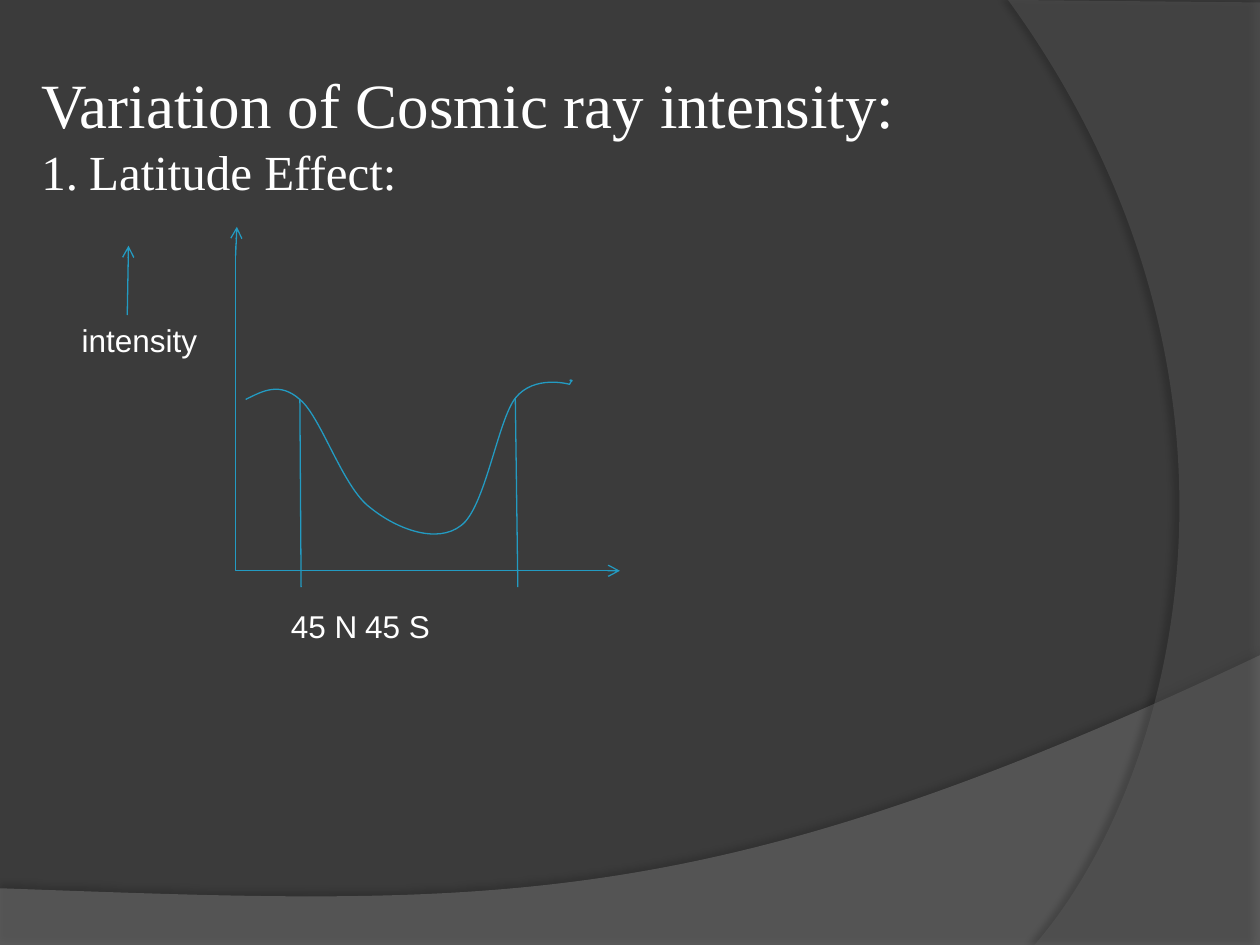
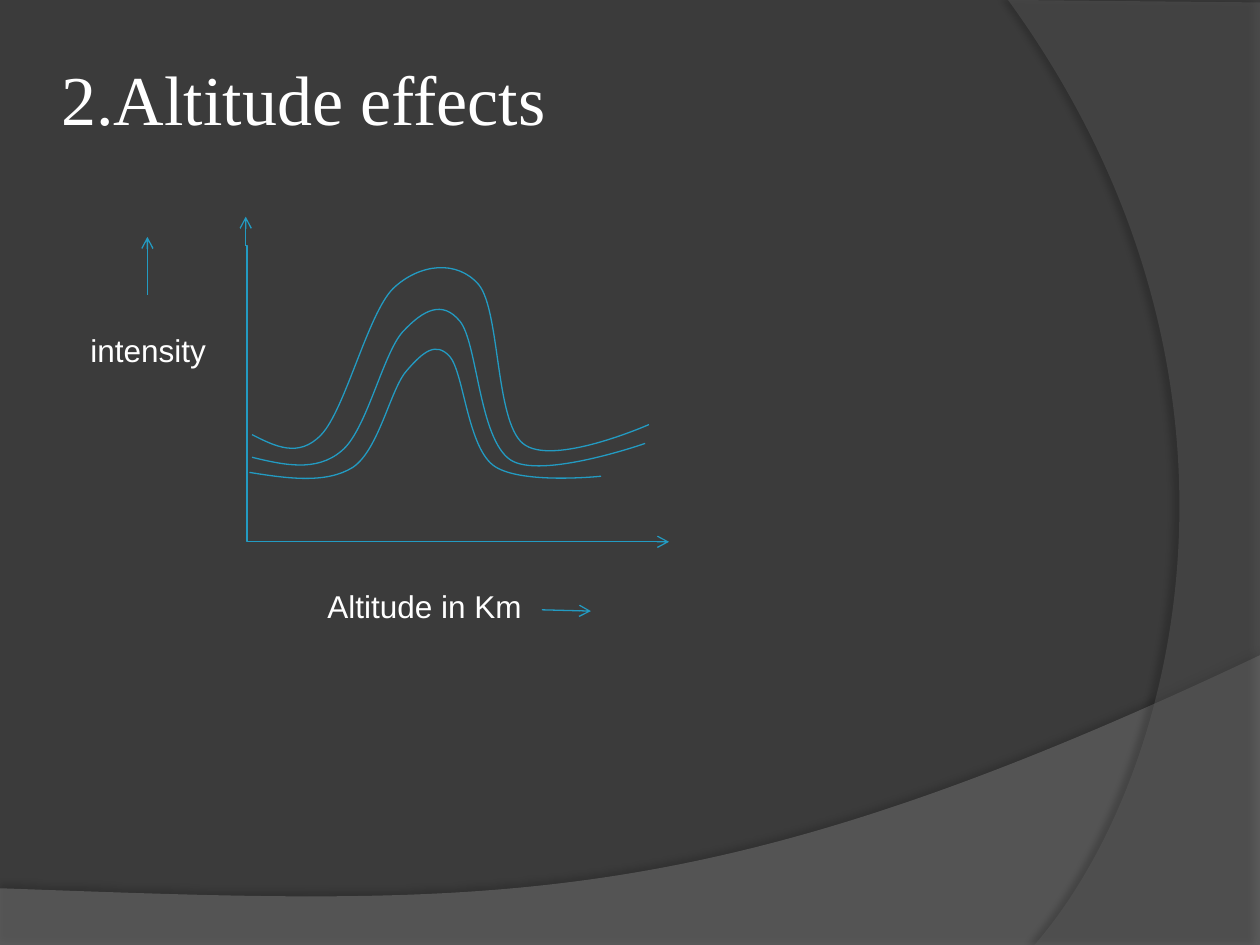
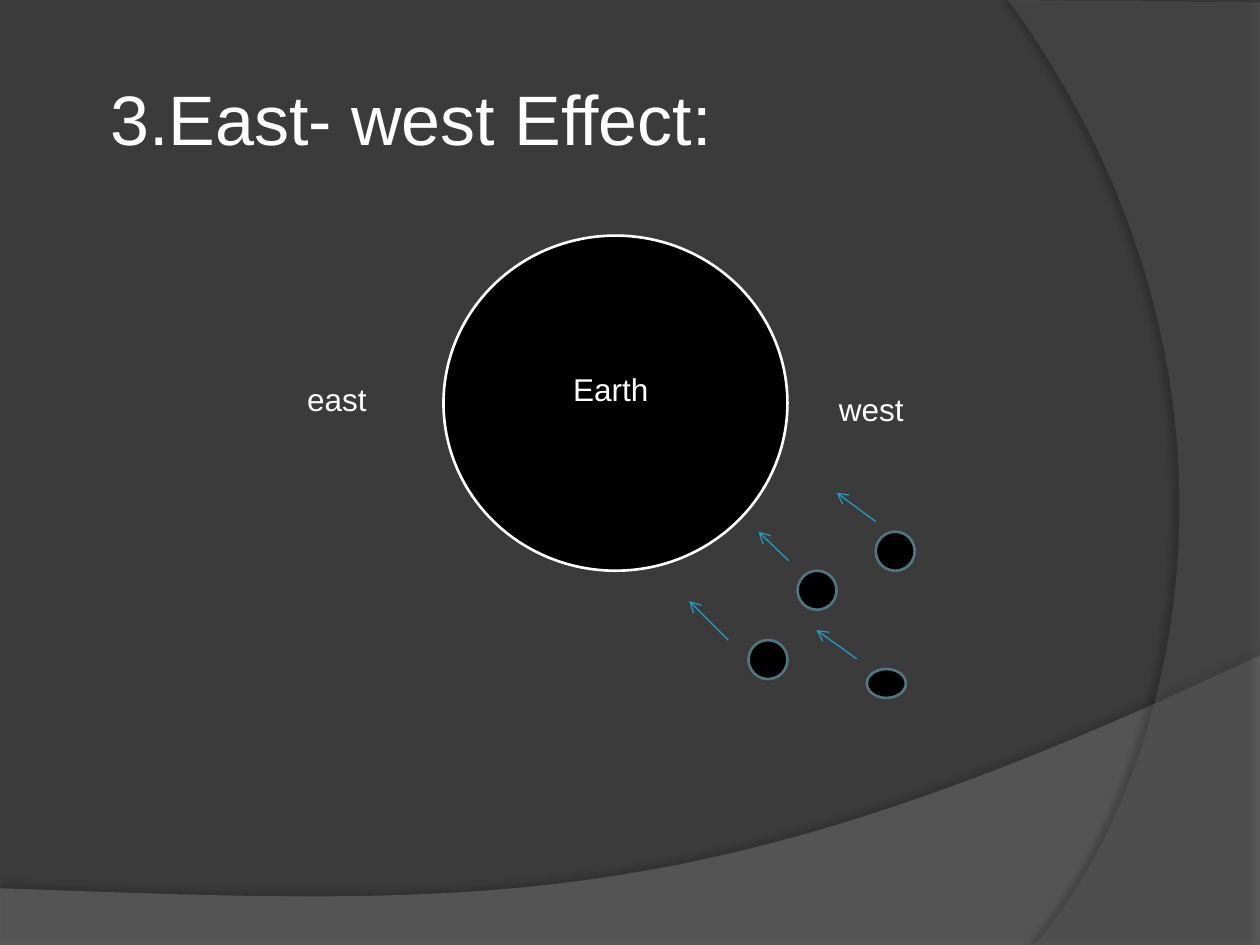
from lxml.etree import SubElement
from pptx import Presentation
from pptx.dml.color import RGBColor
from pptx.enum.shapes import MSO_CONNECTOR as Link, MSO_SHAPE as Preset
from pptx.oxml.ns import qn
from pptx.util import Inches, Pt

WIDTH, HEIGHT = Inches(10), Inches(7.5)
COLUMN = WIDTH // 10

BACKDROP, WHITE, BLACK = "3B3B3B", "FFFFFF", "000000"
LINE_BLUE, PARTICLE_EDGE = "239BC2", "517682"
SANS, SERIF = "Arial", "Times New Roman"

LOWER_BAND = [(0, 7.05), (0, 7.51), (10, 7.51), (10, 5.2),
              (5.59, 7.29, 3.91, 7.19, 0, 7.05)]
RIGHT_BAND = [(10, 0.02), (10, 7.5), (8.21, 7.5),
              (9.35, 6.19, 10.18, 3, 8, 0), (10, 0.02)]

LATITUDE_CURVE = [(1.95, 3.17), (2.09, 3.1, 2.22, 3.03, 2.38, 3.17),
                  (2.55, 3.31, 2.72, 3.87, 2.94, 4.03),
                  (3.15, 4.2, 3.47, 4.32, 3.66, 4.17),
                  (3.85, 4.03, 3.95, 3.34, 4.09, 3.16),
                  (4.24, 2.97, 4.52, 3.05, 4.52, 3.05),
                  (4.52, 3.04, 4.54, 3.02, 4.54, 3.02),
                  (4.54, 3.01, 4.52, 3.02, 4.52, 3.02)]
ALTITUDE_CURVES = [
    [(1.98, 3.75), (2.29, 3.8, 2.59, 3.84, 2.8, 3.71),
     (3.01, 3.57, 3.1, 3.08, 3.23, 2.94), (3.36, 2.79, 3.46, 2.71, 3.57, 2.83),
     (3.68, 2.96, 3.71, 3.53, 3.91, 3.69), (4.11, 3.85, 4.77, 3.78, 4.77, 3.78)],
    [(2, 3.63), (2.25, 3.69, 2.51, 3.75, 2.71, 3.58),
     (2.91, 3.42, 3.04, 2.8, 3.2, 2.63), (3.36, 2.46, 3.51, 2.38, 3.65, 2.55),
     (3.79, 2.72, 3.8, 3.48, 4.05, 3.65), (4.29, 3.81, 5.12, 3.52, 5.12, 3.52)],
    [(2, 3.45), (2.18, 3.54, 2.37, 3.64, 2.55, 3.45),
     (2.74, 3.25, 2.92, 2.49, 3.12, 2.29), (3.33, 2.09, 3.63, 2.06, 3.8, 2.26),
     (3.97, 2.47, 3.93, 3.34, 4.15, 3.52), (4.38, 3.71, 5.15, 3.37, 5.15, 3.37)],
]


def grid(*cells):
    """Turn columns or rows of the grid into lengths."""
    return [round(cell * COLUMN) for cell in cells]


def paint(target, color):
    """Give a fill or a line one solid colour."""
    fill = getattr(target, "fill", target)
    fill.solid()
    fill.fore_color.rgb = RGBColor.from_string(color)


def bend(drawn, pieces):
    """Join each three line steps of a cubic piece into one curve."""
    steps = iter(list(drawn.element.iter(qn("a:lnTo"))))
    for piece in pieces:
        first = next(steps)
        if len(piece) == 2:
            continue
        first.tag = qn("a:cubicBezTo")
        for _ in range(2):
            step = next(steps)
            first.append(step[0])
            step.getparent().remove(step)


def add_outline(slide, outline, closed):
    """Draw an outline of straight and cubic pieces given in grid cells."""
    start, *pieces = outline
    points = [grid(*piece[i:i + 2]) for piece in pieces
              for i in range(0, len(piece), 2)]
    builder = slide.shapes.build_freeform(*grid(*start))
    builder.add_line_segments(points, close=closed)
    drawn = builder.convert_to_shape()
    bend(drawn, pieces)
    drawn.shadow.inherit = False
    return drawn


def add_curve(slide, outline):
    """Draw an open intensity curve."""
    curve = add_outline(slide, outline, False)
    curve.fill.background()
    paint(curve.line, LINE_BLUE)
    curve.line.width = Pt(0.75)


def add_alpha(color_element, percent):
    """Make a colour element translucent."""
    SubElement(color_element, qn("a:alpha"), val=str(percent * 1000))


def add_band(slide, outline, color, opacity, shade, distance, angle):
    """Draw a translucent background band with a soft shadow."""
    band = add_outline(slide, outline, True)
    paint(band, color)
    band.line.fill.background()
    properties = band.element.spPr
    add_alpha(properties.find(qn("a:solidFill")).find(qn("a:srgbClr")), opacity)
    shadow = SubElement(properties.find(qn("a:effectLst")), qn("a:outerShdw"),
                        blurRad=str(Pt(4)), dist=str(Pt(distance)),
                        dir=str(angle * 60000), algn="ctr", rotWithShape="0")
    add_alpha(SubElement(shadow, qn("a:srgbClr"), val=BLACK), shade)
    return band


def dress_layout(deck, layout):
    """Put the dark backdrop and both bands on the shared layout."""
    paint(deck.slide_master.background, BACKDROP)
    for placeholder in list(layout.placeholders):
        layout.shapes.element.remove(placeholder.element)
    first = deck.slides[0]
    bands = [add_band(first, LOWER_BAND, "7F7F7F", 45, 35, 3.5, 270),
             add_band(first, RIGHT_BAND, "5E5E5E", 40, 45, 4, 180)]
    for band in bands:
        layout.shapes.element.append(band.element)


def indent(paragraph, margin, first_line):
    """Set the indents of a paragraph and return its properties."""
    properties = paragraph._p.get_or_add_pPr()
    for side, length in zip(("marL", "indent"), grid(margin, first_line)):
        properties.set(side, str(length))
    return properties


def add_run(paragraph, words, size, font):
    """Add one white run."""
    run = paragraph.add_run()
    run.text = words
    run.font.size, run.font.name = Pt(size), font
    run.font.color.rgb = RGBColor.from_string(WHITE)


def add_label(slide, words, left, top, width, height=0.4, size=18, font=SANS):
    """Add a wrapped text box and return its frame."""
    frame = slide.shapes.add_textbox(*grid(left, top, width, height)).text_frame
    frame.word_wrap = True
    add_run(frame.paragraphs[0], words, size, font)
    return frame


def add_title(slide, words, left, top, width, height, size=40, font=SERIF):
    """Add a slide title with a hanging indent."""
    frame = add_label(slide, words, left, top, width, height, size, font)
    frame.paragraphs[0].space_before = Pt(5)
    indent(frame.paragraphs[0], 0.38, -0.38)
    return frame


def add_numbered(frame, words, size, font):
    """Add a numbered paragraph with a hanging indent."""
    paragraph = frame.add_paragraph()
    properties = indent(paragraph, 0.38, -0.38)
    SubElement(properties, qn("a:buAutoNum"), type="arabicPeriod")
    add_run(paragraph, words, size, font)


def add_tick_labels(slide, words, left, top, width, first, second):
    """Add two tab-separated labels below the ticks."""
    frame = add_label(slide, words, left, top, width)
    properties = indent(frame.paragraphs[0], 0, first)
    stops = SubElement(properties, qn("a:tabLst"))
    SubElement(stops, qn("a:tab"), pos=str(*grid(second)), algn="l")


def add_line(slide, start, end, kind=Link.STRAIGHT):
    """Add a thin blue connector."""
    line = slide.shapes.add_connector(kind, *grid(*start, *end))
    paint(line.line, LINE_BLUE)
    line.line.width = Pt(0.75)
    SubElement(line.element.spPr, qn("a:effectLst"))
    return line


def add_arrow(slide, start, end):
    """Add a connector with an open arrowhead at its end."""
    arrow = add_line(slide, start, end)
    SubElement(arrow.element.spPr.find(qn("a:ln")), qn("a:tailEnd"), type="arrow")


def add_axes(slide, top_left, bottom_right, bend_share):
    """Draw both axes as one elbow that turns at the bottom left."""
    axes = add_line(slide, top_left, bottom_right, Link.ELBOW)
    geometry = axes.element.spPr.find(qn("a:prstGeom"))
    guides = geometry.find(qn("a:avLst"))
    if guides is None:
        guides = SubElement(geometry, qn("a:avLst"))
    SubElement(guides, qn("a:gd"), name="adj1", fmla=f"val {bend_share}")


def add_ball(slide, left, top, width, height, edge):
    """Add a black ellipse with a coloured edge."""
    ball = slide.shapes.add_shape(Preset.OVAL, *grid(left, top, width, height))
    ball.shadow.inherit = False
    paint(ball, BLACK)
    paint(ball.line, edge)
    ball.line.width = Pt(1.5)


def draw_latitude(slide):
    """Show intensity against latitude."""
    title = add_title(slide, "Variation of Cosmic ray intensity:",
                      0.23, 0.47, 9.53, 1.18, 36)
    add_numbered(title, "Latitude Effect:", 28, SERIF)
    add_axes(slide, (1.87, 1.95), (4.77, 4.53), 0)
    add_curve(slide, LATITUDE_CURVE)
    add_label(slide, "intensity", 0.55, 2.5, 1.17)
    for top, foot in (((2.38, 3.17), (2.39, 4.66)), ((4.09, 3.16), (4.11, 4.66))):
        add_line(slide, top, foot)
    add_tick_labels(slide, "45 N\t45 S", 1.8, 4.77, 2.97, 0.41, 2.19)
    for start, end in (((1.01, 2.5), (1.02, 1.95)),
                       ((4.69, 4.53), (4.92, 4.53)),
                       ((1.87, 2.03), (1.88, 1.8))):
        add_arrow(slide, start, end)


def draw_altitude(slide):
    """Show intensity against altitude."""
    add_title(slide, "2.Altitude effects", 0.39, 0.39, 9.22, 1.38)
    add_axes(slide, (1.95, 1.95), (5.23, 4.3), 300)
    for curve in ALTITUDE_CURVES:
        add_curve(slide, curve)
    add_label(slide, "intensity", 0.62, 2.58, 1.17)
    add_label(slide, "Altitude in Km", 2.5, 4.61, 2.58)
    for start, end in (((1.95, 1.95), (1.95, 1.72)),
                       ((5.16, 4.3), (5.31, 4.3)),
                       ((1.17, 2.34), (1.17, 1.88)),
                       ((4.3, 4.84), (4.69, 4.85))):
        add_arrow(slide, start, end)


def draw_east_west(slide):
    """Show particles reaching the Earth from the west."""
    add_title(slide, "3.East- west Effect:", 0.78, 0.55, 8.28, 0.77, font=SANS)
    add_ball(slide, 3.52, 1.87, 2.73, 2.66, WHITE)
    for words, left, top, width in (("Earth", 4.45, 2.89, 1.25),
                                    ("east", 2.34, 2.97, 0.94),
                                    ("west", 6.56, 3.05, 1.25)):
        add_label(slide, words, left, top, width)
    for left, top, height in ((6.33, 4.53, 0.31), (5.94, 5.08, 0.31),
                              (6.88, 5.31, 0.23), (6.95, 4.22, 0.31)):
        add_ball(slide, left, top, 0.31, height, PARTICLE_EDGE)
    for start, end in (((5.78, 5.08), (5.47, 4.77)),
                       ((6.26, 4.45), (6.02, 4.22)),
                       ((6.95, 4.14), (6.64, 3.91)),
                       ((6.8, 5.23), (6.48, 5))):
        add_arrow(slide, start, end)


def main():
    """Build and save the three slides."""
    deck = Presentation()
    deck.slide_width, deck.slide_height = WIDTH, HEIGHT
    blank = deck.slide_layouts[6]
    slides = [deck.slides.add_slide(blank) for _ in range(3)]
    dress_layout(deck, blank)
    for draw, slide in zip((draw_latitude, draw_altitude, draw_east_west), slides):
        draw(slide)
    deck.save("out.pptx")


if __name__ == "__main__":
    main()
